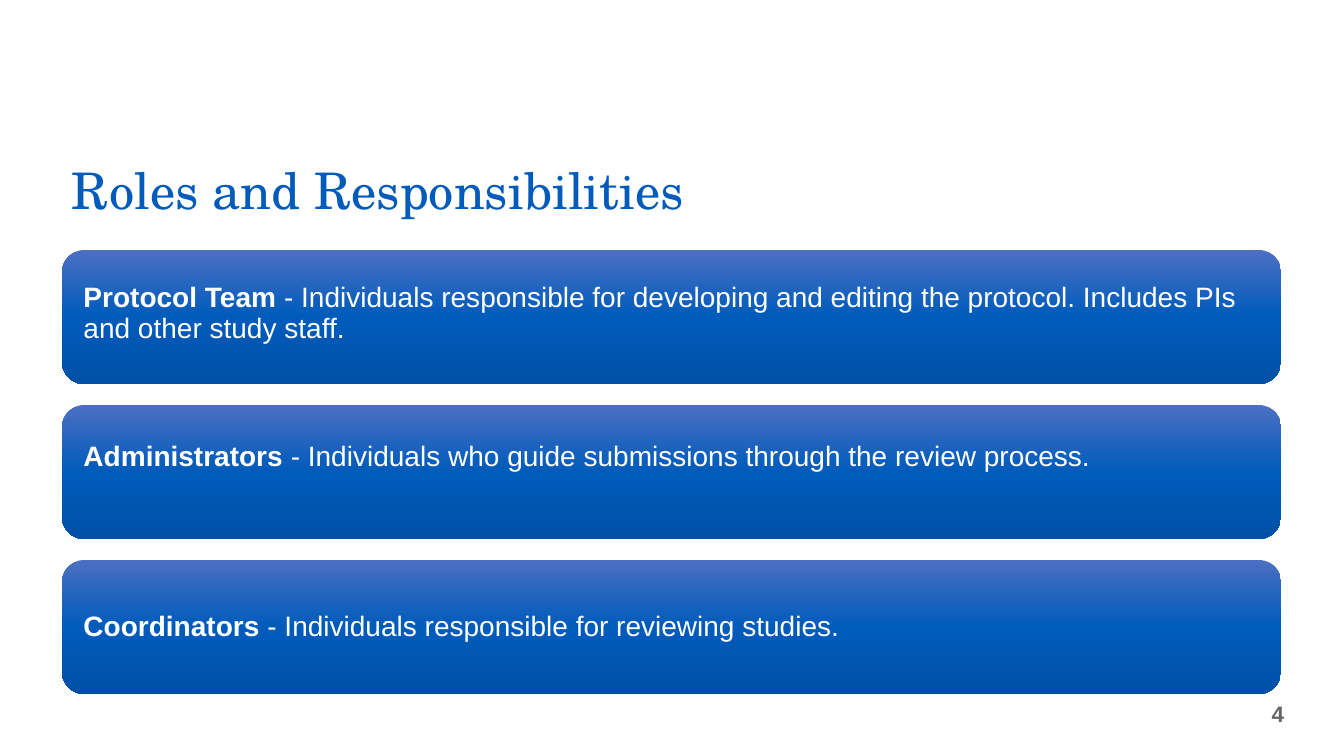
import copy

import pptx
import pptx.dml.color
import pptx.enum.shapes
import pptx.enum.text
import pptx.util

RGB = pptx.dml.color.RGBColor
ALIGN = pptx.enum.text.PP_ALIGN
ANCHOR = pptx.enum.text.MSO_ANCHOR

BLUE = RGB(0x00, 0x5B, 0xBB)
LIGHT = RGB(0x4B, 0x70, 0xC3)
DARK = RGB(0x00, 0x51, 0xA6)
GREY = RGB(0x66, 0x66, 0x66)
WHITE = RGB(0xFF, 0xFF, 0xFF)

# Role, duty, and how many px its text sits above the middle of the card
ROLES = [
    ("Protocol Team", "Individuals responsible for developing and editing "
     "the protocol. Includes PIs and other study staff.", 3),
    ("Administrators",
     "Individuals who guide submissions through the review process.", 15),
    ("Coordinators", "Individuals responsible for reviewing studies.", 0),
]


def px(count):
    return pptx.util.Emu(round(count * 914400 / 100.8))


def write(shape, runs, size, color, font="Arial", align=ALIGN.LEFT,
          anchor=ANCHOR.MIDDLE, line=1.0, pads=(10, 5, 10, 5)):
    """Fill a shape with one paragraph of (text, bold) runs."""
    frame = shape.text_frame
    frame.word_wrap = True
    frame.vertical_anchor = anchor
    (frame.margin_left, frame.margin_top,
     frame.margin_right, frame.margin_bottom) = map(px, pads)
    para = frame.paragraphs[0]
    para.alignment = align
    para.line_spacing = line
    for text, bold in runs:
        run = para.add_run()
        run.text = text
        run.font.name = font
        run.font.size = pptx.util.Pt(size)
        run.font.bold = bold
        run.font.color.rgb = color


class Deck:
    head_font = "TeX Gyre Schola"
    shades = ((0, LIGHT), (0.5, BLUE), (1, DARK))

    def __init__(self):
        self.file = pptx.Presentation()
        self.file.slide_width = px(1344)
        self.file.slide_height = px(756)
        self.slide = self.file.slides.add_slide(self.file.slide_layouts[6])

    def text(self, box, runs, size, color, **style):
        shape = self.slide.shapes.add_textbox(*map(px, box))
        write(shape, runs, size, color, **style)

    def title(self, text):
        self.text((62, 145, 1159, 79), [(text, False)], 36, BLUE,
                  font=self.head_font, anchor=ANCHOR.BOTTOM, line=0.8)

    def number(self, text):
        self.text((1218, 685, 79, 58), [(text, True)], 16, GREY,
                  align=ALIGN.RIGHT, pads=(13, 7, 13, 7))

    def card(self, box, role, duty, lift):
        shape = self.slide.shapes.add_shape(
            pptx.enum.shapes.MSO_SHAPE.ROUNDED_RECTANGLE, *map(px, box))
        shape.shadow.inherit = False
        shape.line.fill.background()
        self.shade(shape)
        write(shape, [(role, True), (f" - {duty}", False)], 20, WHITE,
              line=0.9, pads=(15, 15, 15, 15 + 2 * lift))

    def shade(self, shape):
        """Apply the three-stop gradient, running downwards."""
        fill = shape.fill
        fill.gradient()
        fill.gradient_angle = 270
        stop = shape._element.xpath(".//a:gs")[0]
        stop.addnext(copy.deepcopy(stop))
        for stop, (place, color) in zip(fill.gradient_stops, self.shades):
            stop.position = place
            stop.color.rgb = color


def main():
    deck = Deck()
    deck.title("Roles and Responsibilities")
    for row, (role, duty, lift) in enumerate(ROLES):
        deck.card((62, 250 + 155 * row, 1219, 134), role, duty, lift)
    deck.number("4")
    deck.file.save("out.pptx")


if __name__ == "__main__":
    main()
